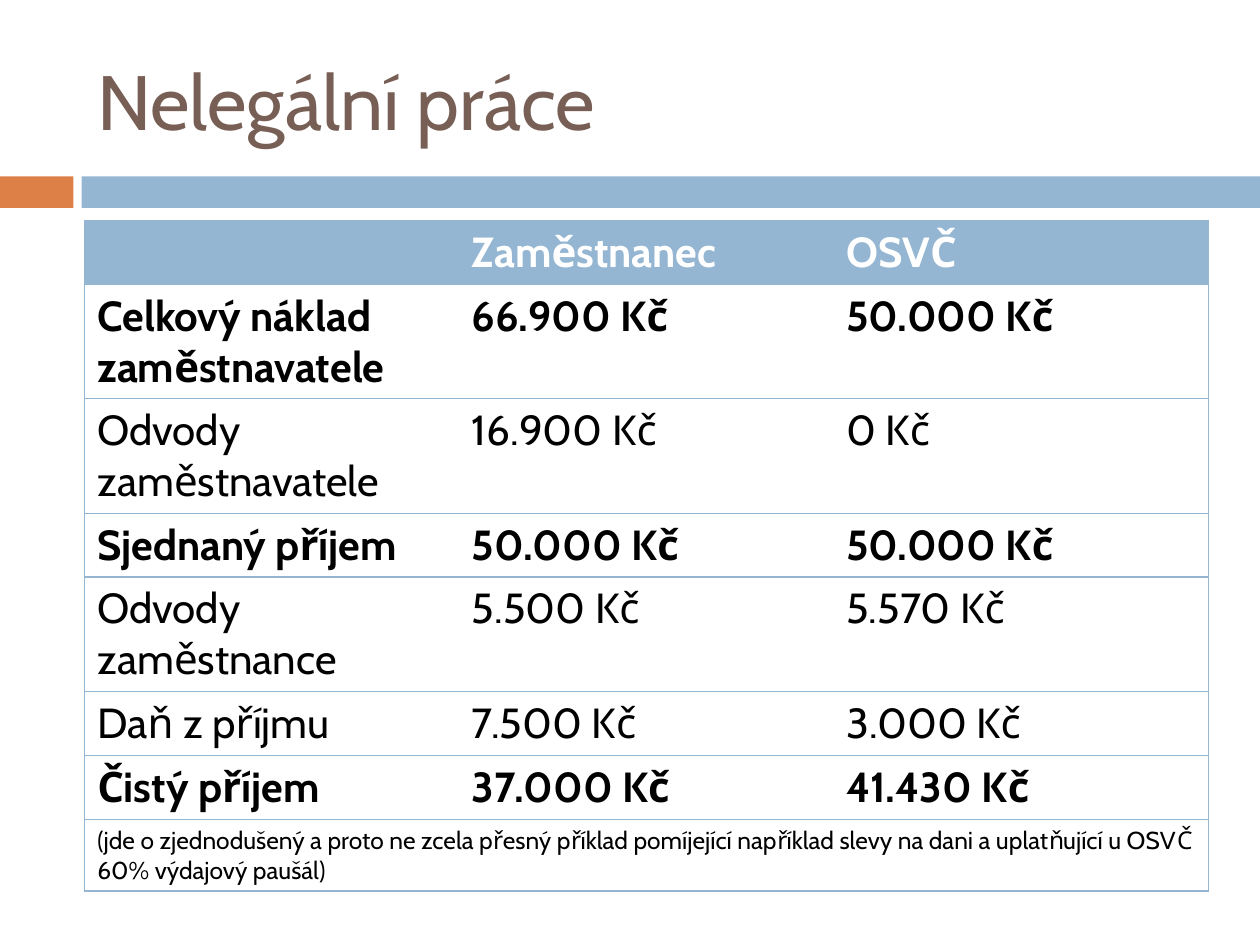
from lxml import etree
from pptx import Presentation
from pptx.dml.color import RGBColor
from pptx.enum import shapes, text
from pptx.oxml import ns
from pptx.util import Pt

FONT = "Cabin"
COLORS = {"title": "775F55", "accent": "DD8047", "blue": "94B6D2",
          "white": "FFFFFF", "black": "000000"}
NO_STYLE = "{2D5ABB26-0587-4C30-8999-92F81FD0307C}"
ONE_LINE, TWO_LINES, NOTE_HEIGHT = 36.5, 65.4, 41

# Texts, bold, row height
HEADER = ("", "Zaměstnanec", "OSVČ")
ROWS = [
    (("Celkový náklad zaměstnavatele", "66.900 Kč", "50.000 Kč"), True, TWO_LINES),
    (("Odvody zaměstnavatele", "16.900 Kč", "0 Kč"), False, TWO_LINES),
    (("Sjednaný příjem", "50.000 Kč", "50.000 Kč"), True, ONE_LINE),
    (("Odvody zaměstnance", "5.500 Kč", "5.570 Kč"), False, TWO_LINES),
    (("Daň z příjmu", "7.500 Kč", "3.000 Kč"), False, ONE_LINE),
    (("Čistý příjem", "37.000 Kč", "41.430 Kč"), True, ONE_LINE),
]
NOTE = ("(jde o zjednodušený a proto ne zcela přesný příklad pomíjející například "
        "slevy na dani a uplatňující u OSVČ 60% výdajový paušál)")


def rgb(name):
    return RGBColor.from_string(COLORS[name])


def write(tf, content, size, color, bold=False):
    r = tf.paragraphs[0].add_run()
    r.text = content
    r.font.name, r.font.size, r.font.bold = FONT, Pt(size), bold
    r.font.color.rgb = rgb(color)


def add_title(slide, x, y, w, h):
    tf = slide.shapes.add_textbox(Pt(x), Pt(y), Pt(w), Pt(h)).text_frame
    tf.word_wrap = True
    tf.vertical_anchor = text.MSO_ANCHOR.MIDDLE
    write(tf, "Nelegální práce", 44, "title")


def add_band(slide, x, y, w, h):
    """Short accent block, a gap, then a bar to the right edge."""
    block, gap = 42, 4.6
    bar = block + gap
    for left, width, color in ((x, block, "accent"), (x + bar, w - bar, "blue")):
        sp = slide.shapes.add_shape(shapes.MSO_SHAPE.RECTANGLE,
                                    Pt(left), Pt(y), Pt(width), Pt(h))
        sp.shadow.inherit = False
        sp.fill.solid()
        sp.fill.fore_color.rgb = rgb(color)
        sp.line.fill.background()


def set_borders(cell, sides):
    tc_pr = cell._tc.get_or_add_tcPr()
    for i, side in enumerate(sides):
        ln = etree.Element(ns.qn(f"a:ln{side}"), w=str(Pt(0.79)))
        fill = etree.SubElement(ln, ns.qn("a:solidFill"))
        etree.SubElement(fill, ns.qn("a:srgbClr"), val=COLORS["blue"])
        tc_pr.insert(i, ln)


def add_income_table(slide, x, y, w):
    rows = [(HEADER, True, ONE_LINE), *ROWS, ((NOTE, "", ""), False, NOTE_HEIGHT)]
    cols, last = len(HEADER), len(rows) - 1
    total = sum(height for _, _, height in rows)
    table = slide.shapes.add_table(len(rows), cols, Pt(x), Pt(y), Pt(w), Pt(total)).table
    table._tbl.tblPr.find(ns.qn("a:tableStyleId")).text = NO_STYLE
    table.horz_banding = False
    for col in table.columns:
        col.width = Pt(w / cols)
    for i, (texts, bold, height) in enumerate(rows):
        table.rows[i].height = Pt(height)
        for j, content in enumerate(texts):
            cell = table.cell(i, j)
            if i == 0:
                cell.fill.solid()
                cell.fill.fore_color.rgb = rgb("blue")
            else:
                cell.fill.background()
            left = "L" if j == 0 else ""
            right = "R" if j == cols - 1 or i == last else ""
            set_borders(cell, left + right + "TB")
            if content:
                write(cell.text_frame, content, 14 if i == last else 24,
                      "white" if i == 0 else "black", bold)
    table.cell(last, 0).merge(table.cell(last, cols - 1))


def main():
    prs = Presentation()
    prs.slide_width, prs.slide_height = Pt(720), Pt(540)
    slide = prs.slides.add_slide(prs.slide_layouts[6])
    add_band(slide, 0, 100.8, 720, 18)
    add_title(slide, 48.4, 18, 642, 78)
    add_income_table(slide, 48.4, 126, 642)
    prs.save("out.pptx")


if __name__ == "__main__":
    main()
